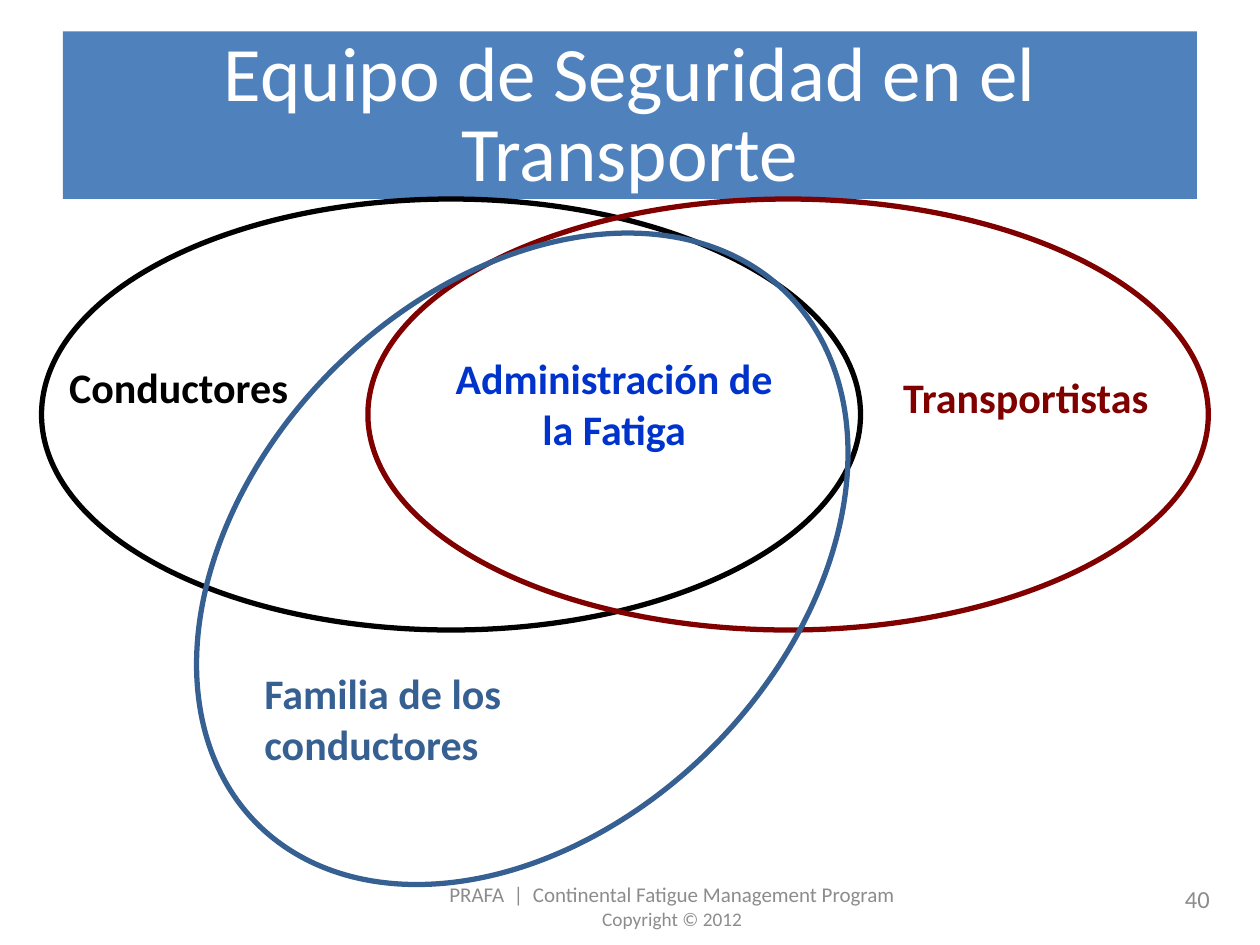
from dataclasses import dataclass

from pptx import Presentation
from pptx.dml.color import RGBColor
from pptx.enum.shapes import MSO_SHAPE
from pptx.enum.text import MSO_ANCHOR, PP_ALIGN
from pptx.util import Inches, Pt

RECT, OVAL = MSO_SHAPE.RECTANGLE, MSO_SHAPE.OVAL
LEFT, CENTER, RIGHT = PP_ALIGN.LEFT, PP_ALIGN.CENTER, PP_ALIGN.RIGHT
TOP, MIDDLE = MSO_ANCHOR.TOP, MSO_ANCHOR.MIDDLE


@dataclass(frozen=True)
class Theme:
    font: str = "Calibri"
    banner: str = "4F81BD"
    title: str = "FFFFFF"
    drivers: str = "000000"
    carriers: str = "800000"
    family: str = "376092"
    core: str = "0033CC"
    muted: str = "8C8C8C"
    title_size: float = 44
    title_leading: float = 45.8
    label_size: float = 24
    number_size: float = 14
    footer_size: float = 12
    copyright_size: float = 11
    outline: float = 3


T = Theme()


def format_text(tf, size, color, align=LEFT, anchor=TOP, bold=False):
    tf.vertical_anchor = anchor
    for p in tf.paragraphs:
        p.alignment = align
        for r in p.runs:
            r.font.name = T.font
            r.font.size = Pt(size)
            r.font.bold = bold
            r.font.color.rgb = RGBColor.from_string(color)


def add_text(box, text, *style, wrap=True, **options):
    tf = s.shapes.add_textbox(*map(Inches, box)).text_frame
    tf.word_wrap = wrap
    tf.text = text
    format_text(tf, *style, **options)
    return tf


prs = Presentation()
prs.slide_width, prs.slide_height = Inches(10), Inches(7.5)
s = prs.slides.add_slide(prs.slide_layouts[5])

# Title over its banner
banner = s.shapes.add_shape(RECT, Inches(0.5), Inches(0.25), Inches(9), Inches(1.33))
banner.shadow.inherit = False
banner.fill.solid()
banner.fill.fore_color.rgb = RGBColor.from_string(T.banner)
banner.line.fill.background()

title = s.shapes.title
title.left, title.top = Inches(0.5), Inches(0.3)
title.width, title.height = Inches(9), Inches(1.25)
title.text_frame.text = "Equipo de Seguridad en el Transporte"
format_text(title.text_frame, T.title_size, T.title, CENTER, MIDDLE)
title.text_frame.paragraphs[0].line_spacing = Pt(T.title_leading)
s.shapes._spTree.append(title._element)  # bring in front of the banner

# Footer and slide number
tf = add_text((3, 7, 4.67, 0.38),
              "PRAFA  |  Continental Fatigue Management Program\nCopyright © 2012",
              T.footer_size, T.muted, CENTER, MIDDLE)
tf.paragraphs[1].runs[0].font.size = Pt(T.copyright_size)
add_text((7.37, 6.93, 2.33, 0.4), "40", T.number_size, T.muted, RIGHT, MIDDLE)

# Venn diagram: overlapping outlines
for box, angle, color in [
    ((0.33, 1.58, 6.5, 3.42), 0, T.drivers),
    ((2.92, 1.58, 6.67, 3.42), 0, T.carriers),
    ((2.02, 1.46, 4.25, 5.95), 45, T.family),
]:
    oval = s.shapes.add_shape(OVAL, *map(Inches, box))
    oval.rotation = angle
    oval.shadow.inherit = False
    oval.fill.background()
    oval.line.color.rgb = RGBColor.from_string(color)
    oval.line.width = Pt(T.outline)

# Venn diagram: labels
for box, text, color, align, wrap in [
    ((0.45, 2.82, 1.96, 0.5), "Conductores", T.drivers, LEFT, False),
    ((7.07, 2.9, 2.29, 0.5), "Transportistas", T.carriers, LEFT, True),
    ((3.5, 2.75, 2.75, 0.91), "Administración de la Fatiga", T.core, CENTER, True),
    ((2, 5.25, 2.17, 0.91), "Familia de los conductores", T.family, LEFT, True),
]:
    add_text(box, text, T.label_size, color, align, bold=True, wrap=wrap)

prs.save("out.pptx")
